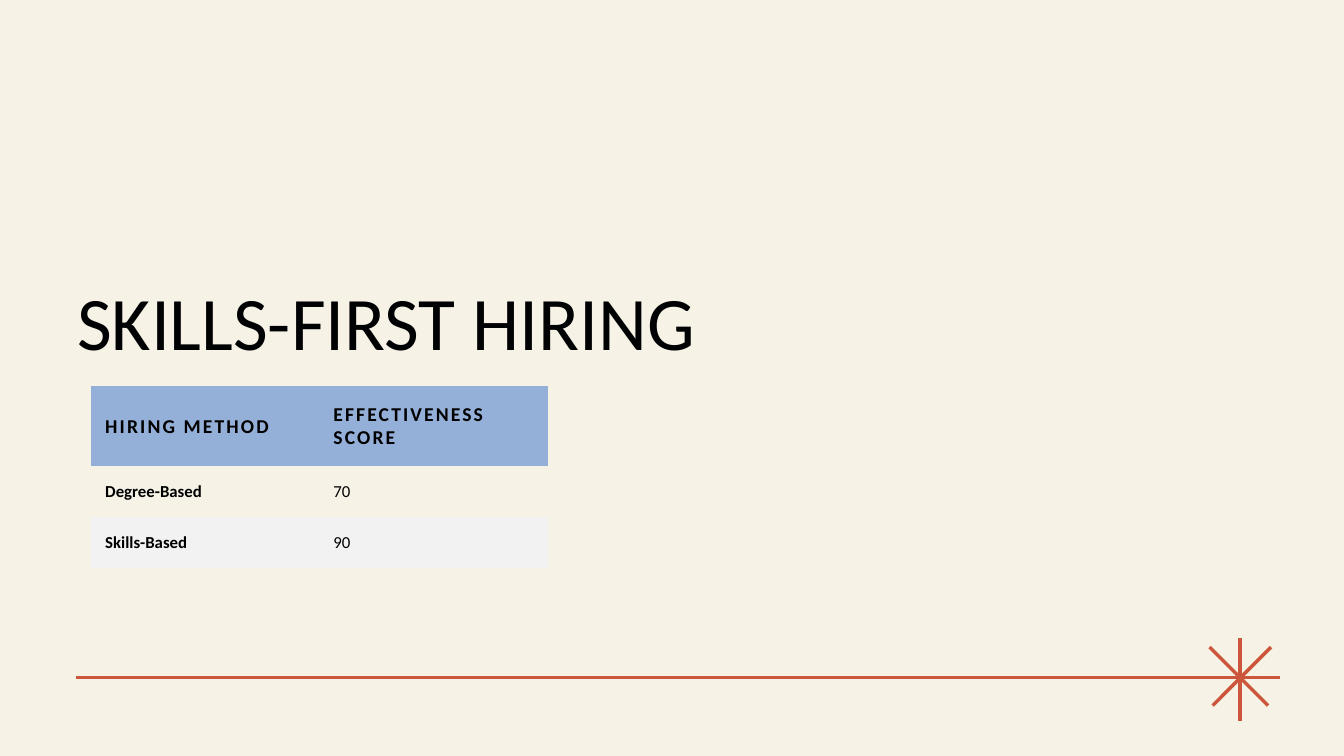
from pptx import Presentation
from pptx.dml.color import RGBColor
from pptx.enum.shapes import MSO_CONNECTOR
from pptx.enum.text import MSO_ANCHOR
from pptx.oxml.ns import qn
from pptx.util import Pt
from lxml.etree import SubElement

CREAM = RGBColor(0xF6, 0xF2, 0xE6)
RUST = RGBColor(0xCC, 0x56, 0x3B)
INK = RGBColor(0x00, 0x01, 0x02)
BLACK = RGBColor(0x00, 0x00, 0x00)
BLUE = RGBColor(0x95, 0xB0, 0xD8)
GREY = RGBColor(0xF2, 0xF2, 0xF2)
FONT = "Calibri"

ROWS = [
    ("HIRING METHOD", "EFFECTIVENESS SCORE"),
    ("Degree-Based", "70"),
    ("Skills-Based", "90"),
]
ROW_FILLS = [BLUE, None, GREY]
ROW_HEIGHTS = [57, 36.4, 36.4]
STAR_LINES = [
    (885.6, 455.8, 885.6, 514.8),
    (914.4, 483.8, 54, 483.8),
    (907.9, 462.2, 866.2, 504),
    (905.8, 504, 864, 462.2),
]


def format_run(r, size, color, bold=False, spacing=0):
    r.font.name = FONT
    r.font.size = Pt(size)
    r.font.bold = bold
    r.font.color.rgb = color
    if spacing:
        r.font._element.set("spc", str(int(spacing * 100)))


def add_line(s, x1, y1, x2, y2):
    line = s.shapes.add_connector(
        MSO_CONNECTOR.STRAIGHT, Pt(x1), Pt(y1), Pt(x2), Pt(y2))
    line.line.color.rgb = RUST
    line.line.width = Pt(2.5)
    SubElement(line._element.spPr, qn("a:effectLst"))


def add_title(s, text):
    tf = s.shapes.add_textbox(Pt(48), Pt(144), Pt(504), Pt(120)).text_frame
    tf.word_wrap = True
    tf.vertical_anchor = MSO_ANCHOR.BOTTOM
    p = tf.paragraphs[0]
    p.text = text
    p.line_spacing = 0.8
    format_run(p.runs[0], 54, INK)


def clear_borders(cell):
    tcPr = cell._tc.get_or_add_tcPr()
    for i, side in enumerate(("lnL", "lnR", "lnT", "lnB")):
        ln = SubElement(tcPr, qn(f"a:{side}"), w="0")
        SubElement(ln, qn("a:noFill"))
        tcPr.insert(i, ln)


def format_cell(cell, text, fill, header, bold):
    cell.text = text
    cell.vertical_anchor = MSO_ANCHOR.MIDDLE
    cell.margin_left = cell.margin_right = Pt(10)
    cell.margin_top = cell.margin_bottom = Pt(10)
    if fill is None:
        cell.fill.background()
    else:
        cell.fill.solid()
        cell.fill.fore_color.rgb = fill
    clear_borders(cell)
    r = cell.text_frame.paragraphs[0].runs[0]
    if header:
        format_run(r, 14, BLACK, True, 1.5)
    else:
        format_run(r, 12, BLACK, bold)


def add_score_table(s):
    table = s.shapes.add_table(
        len(ROWS), 2, Pt(65.2), Pt(276), Pt(326), Pt(sum(ROW_HEIGHTS))).table
    table.horz_banding = False
    for i, (texts, fill) in enumerate(zip(ROWS, ROW_FILLS)):
        table.rows[i].height = Pt(ROW_HEIGHTS[i])
        for j, text in enumerate(texts):
            format_cell(table.cell(i, j), text, fill, i == 0, j == 0)


def main():
    prs = Presentation()
    prs.slide_width = Pt(960)
    prs.slide_height = Pt(540)
    s = prs.slides.add_slide(prs.slide_layouts[6])
    s.background.fill.solid()
    s.background.fill.fore_color.rgb = CREAM
    for ends in STAR_LINES:
        add_line(s, *ends)
    add_title(s, "SKILLS-FIRST HIRING")
    add_score_table(s)
    prs.save("out.pptx")


if __name__ == "__main__":
    main()
